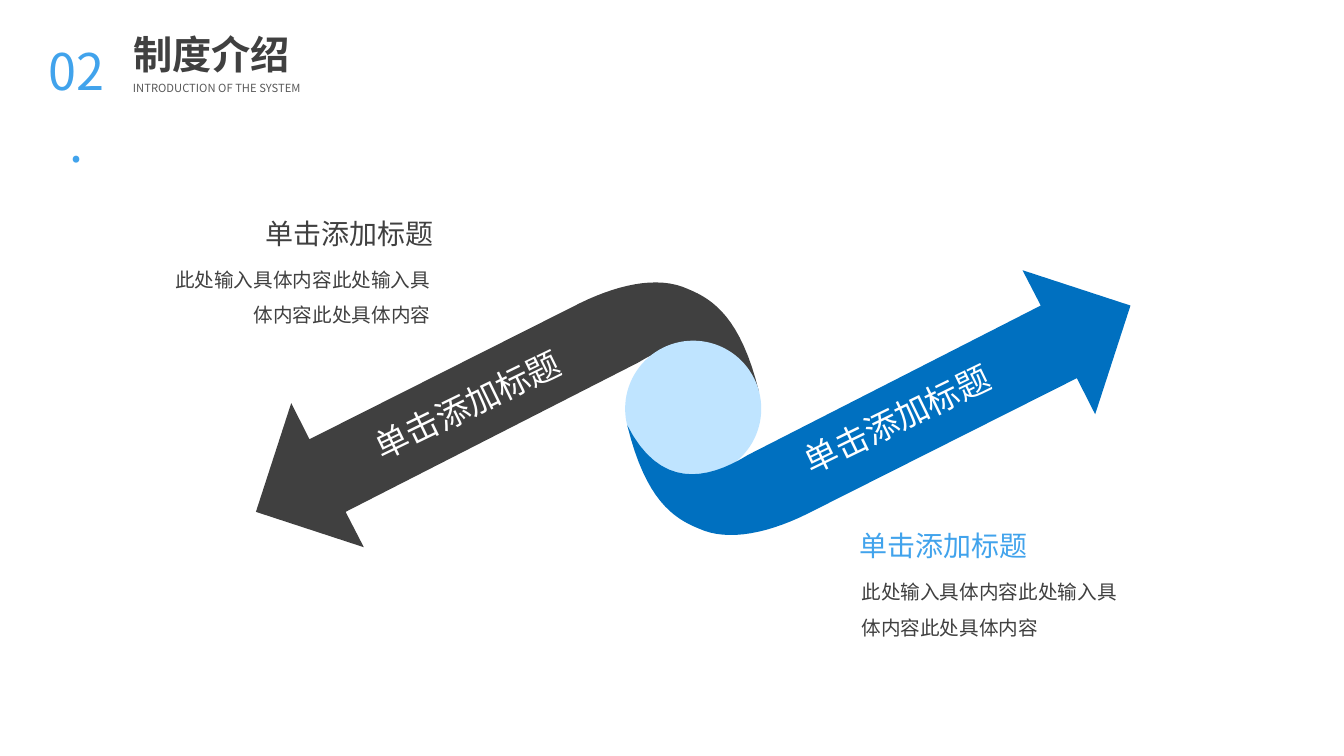
from dataclasses import dataclass

from lxml import etree
from pptx import Presentation
from pptx import util as u
from pptx.dml.color import RGBColor
from pptx.enum import shapes, text
from pptx.oxml.ns import qn

Point = tuple[float, float]


@dataclass(frozen=True)
class Theme:
    dark: str = "404040"
    grey: str = "595959"
    white: str = "FFFFFF"
    sky: str = "41A3EC"
    pale: str = "BFE4FF"
    blue: str = "0070C0"
    font: str = "Noto Sans CJK SC"
    title_font: str = "Arial"
    number_size: int = 36
    title_size: int = 28
    label_size: int = 24
    heading_size: int = 20
    body_size: int = 14
    caption_size: int = 8


@dataclass(frozen=True)
class Caption:
    words: str
    left: float
    top: float
    width: float
    height: float
    size: int
    color: str
    align: text.PP_ALIGN = text.PP_ALIGN.LEFT
    spacing: float = 1.0
    anchor: text.MSO_ANCHOR = text.MSO_ANCHOR.TOP
    rotation: float = 0
    wrap: bool = True
    bold: bool = False
    font: str = Theme.font


THEME = Theme()
HEADING = "单击添加标题"
BODY = "此处输入具体内容此处输入具体内容此处具体内容"
ALIGN = text.PP_ALIGN
PIVOT = (17.47, 10.3)
CIRCLE_SIZE = 3.43
CURVE_STEPS = 16

ARROW_HEAD: list[Point] = [(6.45, 12.9), (7.34, 10.16), (7.8, 11.07), (14.4, 7.75)]
ARROW_CURVES: list[tuple[Point, Point, Point]] = [
    ((15.52, 7.16), (16.59, 6.93), (17.35, 7.29)),
    ((17.96, 7.54), (18.67, 8.0), (19.13, 9.88)),
    ((18.31, 8.28), (17.15, 8.48), (16.08, 9.14)),
]
ARROW_TAIL: list[Point] = [(8.71, 12.9), (9.17, 13.79)]

TITLE = Caption("制度介绍", 3.1, 0.64, 5.31, 1.45, THEME.title_size, THEME.dark,
                ALIGN.JUSTIFY, bold=True, font=THEME.title_font)


def arrow_label(left: float, top: float) -> Caption:
    return Caption(HEADING, left, top, 5.64, 1.19, THEME.label_size, THEME.white,
                   spacing=0.9, rotation=334.1, wrap=False)


def heading(left: float, top: float, color: str, align: text.PP_ALIGN) -> Caption:
    return Caption(HEADING, left, top, 5.69, 1.04, THEME.heading_size, color,
                   align, 0.9, text.MSO_ANCHOR.MIDDLE)


def body(left: float, top: float, align: text.PP_ALIGN) -> Caption:
    return Caption(BODY, left, top, 7.42, 1.96, THEME.body_size, THEME.dark, align, 1.5)


CAPTIONS = [
    Caption("INTRODUCTION OF THE SYSTEM", 3.1, 1.93, 6.27, 0.61,
            THEME.caption_size, THEME.grey, ALIGN.JUSTIFY),
    Caption("02.", 0.84, 0.58, 2.18, 1.98, THEME.number_size, THEME.sky, ALIGN.CENTER, 1.2),
    arrow_label(9.02, 9.65),
    arrow_label(19.84, 10.01),
    heading(5.49, 5.41, THEME.dark, ALIGN.RIGHT),
    body(3.68, 6.32, ALIGN.RIGHT),
    heading(21.41, 13.28, THEME.sky, ALIGN.LEFT),
    body(21.46, 14.2, ALIGN.LEFT),
]


def write(box, caption: Caption) -> None:
    box.left, box.top = u.Cm(caption.left), u.Cm(caption.top)
    box.width, box.height = u.Cm(caption.width), u.Cm(caption.height)
    box.rotation = caption.rotation
    frame = box.text_frame
    frame.text = caption.words
    frame.word_wrap = caption.wrap
    frame.auto_size = text.MSO_AUTO_SIZE.NONE
    frame.vertical_anchor = caption.anchor
    para = frame.paragraphs[0]
    para.alignment = caption.align
    para.line_spacing = caption.spacing
    span = para.runs[0]
    span.font.size = u.Pt(caption.size)
    span.font.bold = caption.bold
    span.font.name = caption.font
    span.font.color.rgb = RGBColor.from_string(caption.color)
    latin = span.font._element.find(qn("a:latin"))
    east_asian = etree.Element(qn("a:ea"), typeface=THEME.font)
    latin.addnext(east_asian)


def paint(shape, color: str) -> None:
    shape.shadow.inherit = False
    shape.fill.solid()
    shape.fill.fore_color.rgb = RGBColor.from_string(color)
    shape.line.fill.background()


def curve(start: Point, first: Point, second: Point, end: Point) -> list[Point]:
    points = []
    for step in range(1, CURVE_STEPS + 1):
        t = step / CURVE_STEPS
        weights = ((1 - t) ** 3, 3 * t * (1 - t) ** 2, 3 * t**2 * (1 - t), t**3)
        corners = (start, first, second, end)
        points.append((sum(w * x for w, (x, _) in zip(weights, corners)),
                       sum(w * y for w, (_, y) in zip(weights, corners))))
    return points


def arrow_outline() -> list[Point]:
    outline = list(ARROW_HEAD)
    for first, second, end in ARROW_CURVES:
        outline += curve(outline[-1], first, second, end)
    return outline + ARROW_TAIL


def half_turn(outline: list[Point]) -> list[Point]:
    return [(2 * PIVOT[0] - x, 2 * PIVOT[1] - y) for x, y in outline]


def draw_arrow(page, outline: list[Point], color: str) -> None:
    points = [(u.Cm(x), u.Cm(y)) for x, y in outline]
    builder = page.shapes.build_freeform(*points[0], scale=1.0)
    builder.add_line_segments(points[1:], close=True)
    paint(builder.convert_to_shape(), color)


def draw_circle(page) -> None:
    left, top = (u.Cm(middle - CIRCLE_SIZE / 2) for middle in PIVOT)
    circle = page.shapes.add_shape(shapes.MSO_SHAPE.FLOWCHART_CONNECTOR, left, top,
                                   u.Cm(CIRCLE_SIZE), u.Cm(CIRCLE_SIZE))
    paint(circle, THEME.pale)


def main() -> None:
    deck = Presentation()
    deck.slide_width, deck.slide_height = u.Cm(33.87), u.Cm(19.05)
    page = deck.slides.add_slide(deck.slide_layouts[5])
    write(page.shapes.title, TITLE)
    outline = arrow_outline()
    draw_arrow(page, outline, THEME.dark)
    draw_circle(page)
    draw_arrow(page, half_turn(outline), THEME.blue)
    for caption in CAPTIONS:
        write(page.shapes.add_textbox(0, 0, 0, 0), caption)
    deck.save("out.pptx")


if __name__ == "__main__":
    main()
